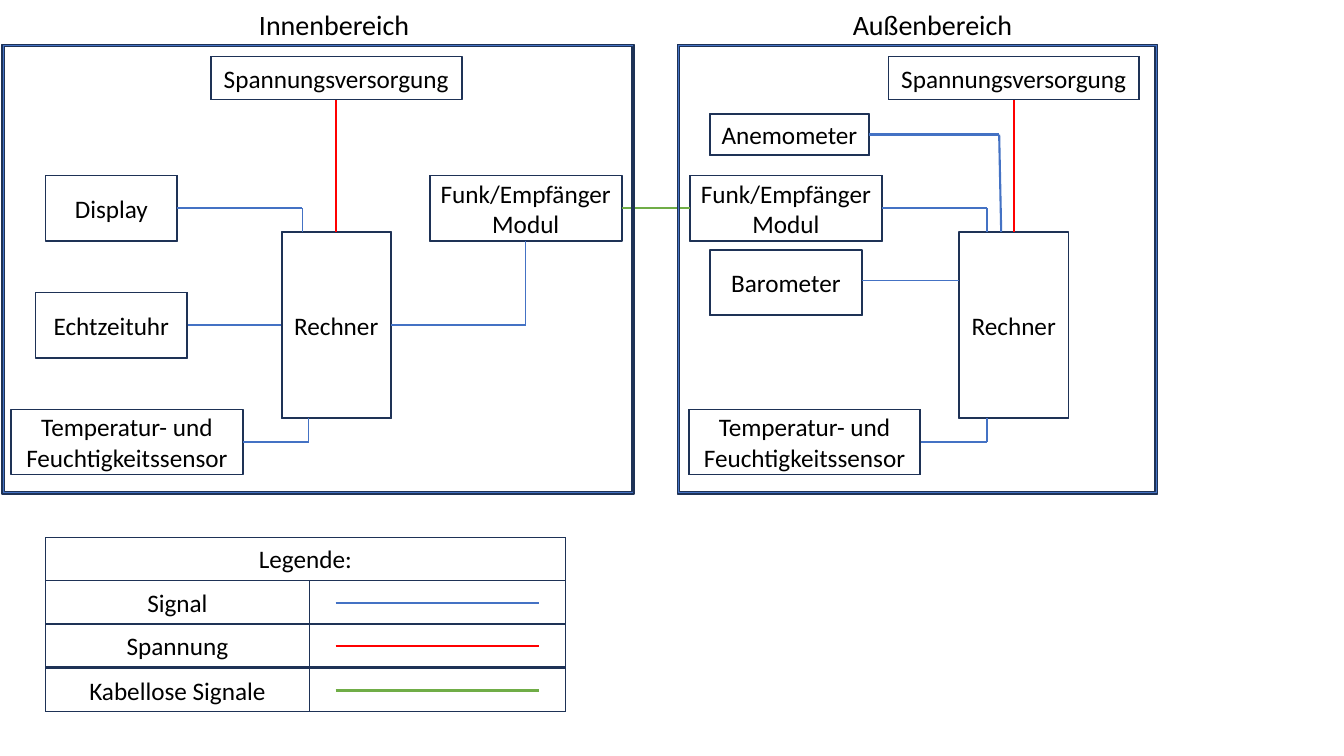
from itertools import pairwise

from lxml.etree import SubElement
from pptx import Presentation
from pptx.dml.color import RGBColor
from pptx.enum.shapes import MSO_CONNECTOR, MSO_SHAPE
from pptx.enum.text import MSO_ANCHOR, PP_ALIGN
from pptx.oxml.ns import qn
from pptx.util import Pt

PX = 9144
SIGNAL = RGBColor(0x44, 0x72, 0xC4)
POWER = RGBColor(0xFF, 0x00, 0x00)
WIRELESS = RGBColor(0x70, 0xAD, 0x47)
OUTLINE = RGBColor(0x1E, 0x32, 0x56)
BLACK = RGBColor(0x00, 0x00, 0x00)
TOP, LEFT, BOTTOM, RIGHT = range(4)
CONTROLLER_TOP = 230
CONTROLLER_HEIGHT = 185
RADIO = "Funk/Empfänger\nModul"


def style_text(frame, text, size):
    """Fill a text frame and format its runs."""
    frame.text = text
    for para in frame.paragraphs:
        for span in para.runs:
            span.font.name = "Calibri"
            span.font.size = Pt(size)
            span.font.color.rgb = BLACK


def add_block(slide, left, top, width, height, text=""):
    """Add a thin frame with centred text."""
    block = slide.shapes.add_shape(
        MSO_SHAPE.FRAME, left * PX, top * PX, width * PX, height * PX)
    block.adjustments[0] = 0.005
    block.shadow.inherit = False
    block.fill.solid()
    block.fill.fore_color.rgb = SIGNAL
    block.line.color.rgb = OUTLINE
    block.line.width = Pt(1)
    if text:
        frame = block.text_frame
        style_text(frame, text, 18)
        frame.word_wrap = True
        frame.vertical_anchor = MSO_ANCHOR.MIDDLE
        for para in frame.paragraphs:
            para.alignment = PP_ALIGN.CENTER
    return block


def side_point(block, side):
    """Return the middle of one side of a block in EMU."""
    across = {LEFT: 0, RIGHT: block.width}.get(side, block.width // 2)
    down = {TOP: 0, BOTTOM: block.height}.get(side, block.height // 2)
    return block.left + across, block.top + down


def add_wire(slide, points, color, width, source=None, target=None):
    """Draw straight segments through EMU points and join the outer ends."""
    wires = []
    for start, end in pairwise(points):
        wire = slide.shapes.add_connector(MSO_CONNECTOR.STRAIGHT, *start, *end)
        wire.line.color.rgb = color
        wire.line.width = Pt(width)
        SubElement(wire._element.spPr, qn("a:effectLst"))
        wires.append(wire)
    if source:
        wires[0].begin_connect(*source)
    if target:
        wires[-1].end_connect(*target)


def join_blocks(slide, source, target, color, width):
    """Join two block sides with one straight wire."""
    points = [side_point(*source), side_point(*target)]
    add_wire(slide, points, color, width, source, target)


def add_elbow(slide, block, corner, end, width=1, slant=0):
    """Lead a signal from a block's right side to a corner, then up or down."""
    start = side_point(block, RIGHT)
    points = [start, (corner * PX, start[1]), ((corner + slant) * PX, end * PX)]
    add_wire(slide, points, SIGNAL, width, (block, RIGHT))


def draw_core(slide, left, sensor_corner):
    """Place controller, supply and climate sensor around the controller's left edge."""
    controller = add_block(slide, left, CONTROLLER_TOP, 109, CONTROLLER_HEIGHT, "Rechner")
    sensor = add_block(slide, left - 268, 406, 230, 65,
                       "Temperatur- und Feuchtigkeitssensor")
    supply = add_block(slide, left - 70, 56, 249, 43, "Spannungsversorgung")
    add_elbow(slide, sensor, left + sensor_corner, CONTROLLER_TOP + CONTROLLER_HEIGHT)
    join_blocks(slide, (supply, BOTTOM), (controller, TOP), POWER, 1.5)
    return controller


def draw_indoor(slide, left):
    """Draw the indoor modules and return the radio module."""
    controller = draw_core(slide, left + 277, 27)
    display = add_block(slide, left + 43, 174, 131, 65, "Display")
    clock = add_block(slide, left + 33, 290, 151, 65, "Echtzeituhr")
    radio = add_block(slide, left + 424, 174, 191, 65, RADIO)
    add_elbow(slide, display, left + 298, CONTROLLER_TOP)
    join_blocks(slide, (clock, RIGHT), (controller, LEFT), SIGNAL, 1)
    start, end = side_point(radio, BOTTOM), side_point(controller, RIGHT)
    add_wire(slide, [start, (start[0], end[1]), end], SIGNAL, 1,
             (radio, BOTTOM), (controller, RIGHT))
    return radio


def draw_outdoor(slide, left):
    """Draw the outdoor modules and return the radio module."""
    draw_core(slide, left + 279, 28)
    radio = add_block(slide, left + 12, 174, 191, 65, RADIO)
    anemometer = add_block(slide, left + 32, 113, 158, 41, "Anemometer")
    add_block(slide, left + 32, 248, 151, 65, "Barometer")
    add_elbow(slide, radio, left + 307, CONTROLLER_TOP)
    add_elbow(slide, anemometer, left + 319, CONTROLLER_TOP, 1.5, 2)
    barometer_wire = [((left + x) * PX, 278 * PX) for x in (183, 279)]
    add_wire(slide, barometer_wire, SIGNAL, 1)
    return radio


def draw_area(slide, left, width, title, title_left, title_width):
    """Draw the border of an area and its heading."""
    add_block(slide, left, 44, width, 446)
    heading = slide.shapes.add_textbox(
        (left + title_left) * PX, 3 * PX, title_width * PX, 44 * PX)
    style_text(heading.text_frame, title, 20)
    heading.text_frame.word_wrap = True


def draw_legend(slide, left, top):
    """Draw the legend with one row per kind of wire."""
    add_block(slide, left, top, 516, 43, "Legende:")
    entries = [("Signal", SIGNAL), ("Spannung", POWER), ("Kabellose Signale", WIRELESS)]
    for row, (label, color) in enumerate(entries, 1):
        row_top = top + row * 130 // 3
        add_block(slide, left, row_top, 262, 43, label)
        add_block(slide, left + 262, row_top, 254, 43)
        points = [((left + x) * PX, (row_top + 22) * PX) for x in (288, 490)]
        add_wire(slide, points, color, 1.5)


def main():
    """Build the block diagram and save it."""
    deck = Presentation()
    deck.slide_width, deck.slide_height = 1333 * PX, 750 * PX
    slide = deck.slides.add_slide(deck.slide_layouts[6])
    indoor_radio = draw_indoor(slide, 2)
    outdoor_radio = draw_outdoor(slide, 672)
    join_blocks(slide, (indoor_radio, RIGHT), (outdoor_radio, LEFT), WIRELESS, 1.5)
    draw_legend(slide, 45, 533)
    draw_area(slide, 2, 627, "Innenbereich", 245, 172)
    draw_area(slide, 672, 476, "Außenbereich", 164, 180)
    deck.save("out.pptx")


if __name__ == "__main__":
    main()
